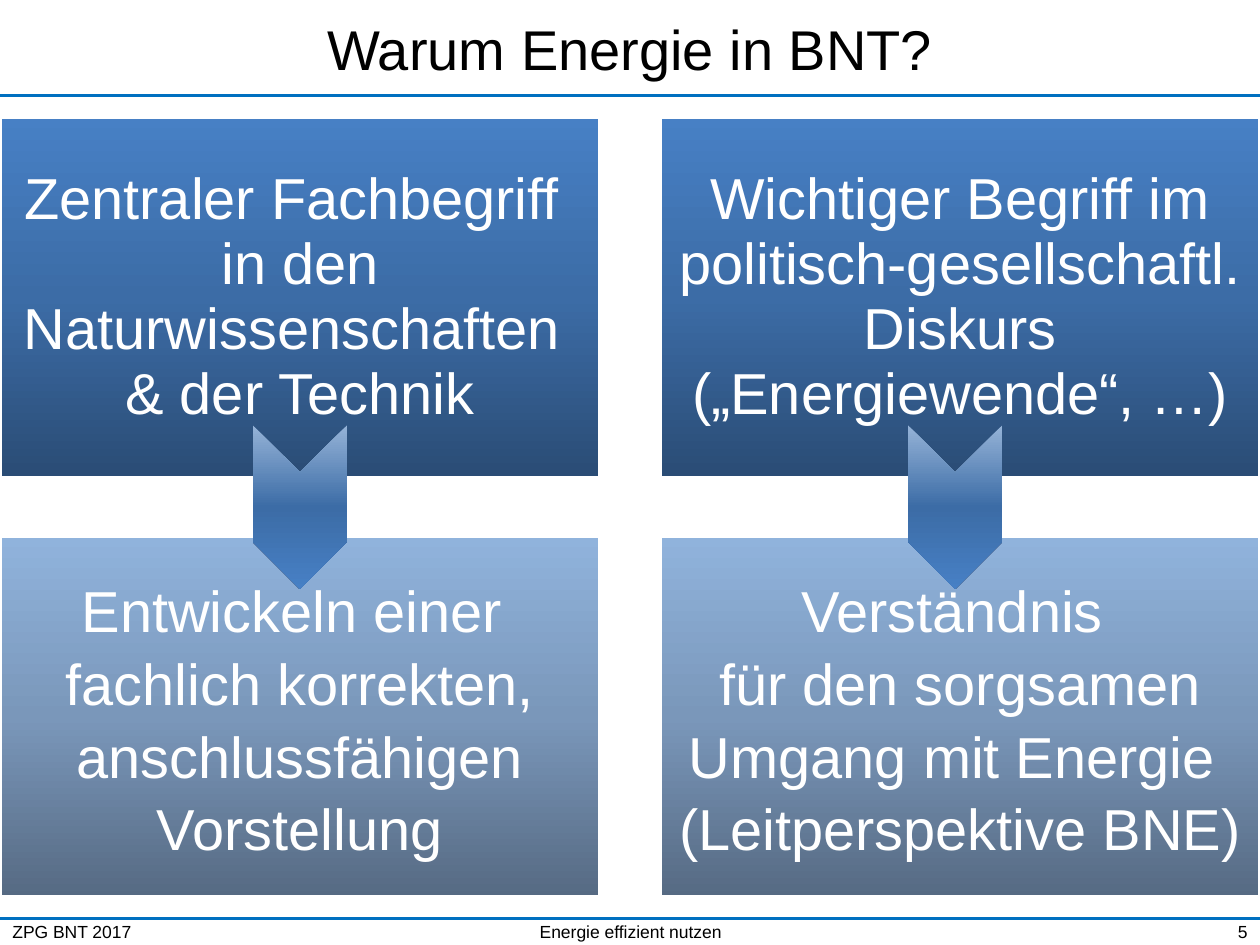
from lxml import etree
from pptx import Presentation
from pptx.dml.color import RGBColor
from pptx.enum.shapes import MSO_CONNECTOR as CONNECTOR, MSO_SHAPE as SHAPE
from pptx.enum.text import MSO_ANCHOR as ANCHOR, PP_ALIGN as ALIGN
from pptx.oxml import parse_xml
from pptx.oxml.ns import nsdecls, qn
from pptx.util import Inches, Pt

WIDTH, HEIGHT = 10, 7.5
HEADER_LINE, FOOTER_LINE = 0.76, 7.29

# Grid of two columns and two rows
BOX_WIDTH, BOX_HEIGHT = 4.76, 2.86
COLUMN_STEP, ROW_STEP, GRID_TOP = 5.24, 3.33, 0.93
ARROW_LENGTH, ARROW_WIDTH = 1.3, 0.75
ARROW_CENTERS = (2.38, 7.58)

# Gradient stops at 0, 50 and 100 percent
DARK_BLUE = ("2A4C75", "3C6CA6", "4780C5")
LIGHT_BLUE = ("566A83", "7A97BA", "90B3DC")
ARROW_BLUE = ("95B3D7", "3C6CA6", "4780C5")

# One row per entry: gradient, line spacing, texts from left to right
ROWS = (
    (DARK_BLUE, 0.94, (
        "Zentraler Fachbegriff \vin den Naturwissenschaften \v& der Technik",
        "Wichtiger Begriff im politisch-gesellschaftl. Diskurs\v(„Energiewende“, …)")),
    (LIGHT_BLUE, 1.05, (
        "Entwickeln einer \vfachlich korrekten, anschlussfähigen Vorstellung",
        "Verständnis \vfür den sorgsamen Umgang mit Energie \v(Leitperspektive BNE)")),
)
FOOTERS = (
    ("ZPG BNT 2017", 0, 2.72, ALIGN.LEFT),
    ("Energie effizient nutzen", 3.42, 3.17, ALIGN.CENTER),
    ("5", 7.36, 2.64, ALIGN.RIGHT),
)


def color(hex_value):
    return RGBColor.from_string(hex_value)


def inches(*lengths):
    return [Inches(length) for length in lengths]


def write(shape, text, size, hex_value, align, margins):
    frame = shape.text_frame
    frame.word_wrap = True
    frame.vertical_anchor = ANCHOR.MIDDLE
    frame.margin_left, frame.margin_top, frame.margin_right, frame.margin_bottom = inches(*margins)
    frame.text = text
    paragraph = frame.paragraphs[0]
    paragraph.alignment = align
    paragraph.font.name = "Arial"
    paragraph.font.size = Pt(size)
    paragraph.font.color.rgb = color(hex_value)
    return paragraph


def set_gradient(shape, colors, angle):
    """Fill with three even stops, which fill.gradient() does not offer."""
    stops = "".join(
        f'<a:gs pos="{index * 50000}"><a:srgbClr val="{value}"/></a:gs>'
        for index, value in enumerate(colors))
    gradient = parse_xml(
        f'<a:gradFill {nsdecls("a")} rotWithShape="1"><a:gsLst>{stops}</a:gsLst>'
        f'<a:lin ang="{angle * 60000}" scaled="0"/></a:gradFill>')
    shape._element.spPr.find(qn("a:prstGeom")).addnext(gradient)


def add_title(slide, text):
    title = slide.shapes.title
    title.left, title.top, title.width, title.height = inches(0, 0, WIDTH, HEADER_LINE)
    write(title, text, 32, "000000", ALIGN.CENTER, (0.1, 0.05, 0.1, 0.05))


def add_rule(slide, top):
    rule = slide.shapes.add_connector(CONNECTOR.STRAIGHT, *inches(0, top, WIDTH, top))
    rule.line.color.rgb = color("0070C0")
    rule.line.width = Pt(1.5)
    etree.SubElement(rule._element.spPr, qn("a:effectLst"))


def add_box(slide, column, row, text, colors, spacing):
    box = slide.shapes.add_shape(SHAPE.RECTANGLE, *inches(
        column * COLUMN_STEP, GRID_TOP + row * ROW_STEP, BOX_WIDTH, BOX_HEIGHT))
    box.shadow.inherit = False
    set_gradient(box, colors, 270)
    box.line.color.rgb = color("FFFFFF")
    box.line.width = Pt(2)
    paragraph = write(box, text, 33, "FFFFFF", ALIGN.CENTER, (0.14,) * 4)
    paragraph.line_spacing = spacing


def add_arrow(slide, center):
    middle = GRID_TOP + (ROW_STEP + BOX_HEIGHT) / 2
    arrow = slide.shapes.add_shape(SHAPE.CHEVRON, *inches(
        center - ARROW_LENGTH / 2, middle - ARROW_WIDTH / 2, ARROW_LENGTH, ARROW_WIDTH))
    arrow.rotation = 90
    arrow.shadow.inherit = False
    set_gradient(arrow, ARROW_BLUE, 0)
    arrow.line.fill.background()


def add_footer(slide, text, left, width, align):
    footer = slide.shapes.add_textbox(*inches(left, FOOTER_LINE, width, HEIGHT - FOOTER_LINE))
    write(footer, text, 10, "000000", align, (0.1, 0, 0.1, 0))


def main():
    presentation = Presentation()
    presentation.slide_width, presentation.slide_height = inches(WIDTH, HEIGHT)
    slide = presentation.slides.add_slide(presentation.slide_layouts[5])

    # Frame of the slide
    add_title(slide, "Warum Energie in BNT?")
    for top in (HEADER_LINE, FOOTER_LINE):
        add_rule(slide, top)
    for footer in FOOTERS:
        add_footer(slide, *footer)

    # Reasons above, goals below
    for row, (colors, spacing, texts) in enumerate(ROWS):
        for column, text in enumerate(texts):
            add_box(slide, column, row, text, colors, spacing)
    for center in ARROW_CENTERS:
        add_arrow(slide, center)

    presentation.save("out.pptx")


if __name__ == "__main__":
    main()
